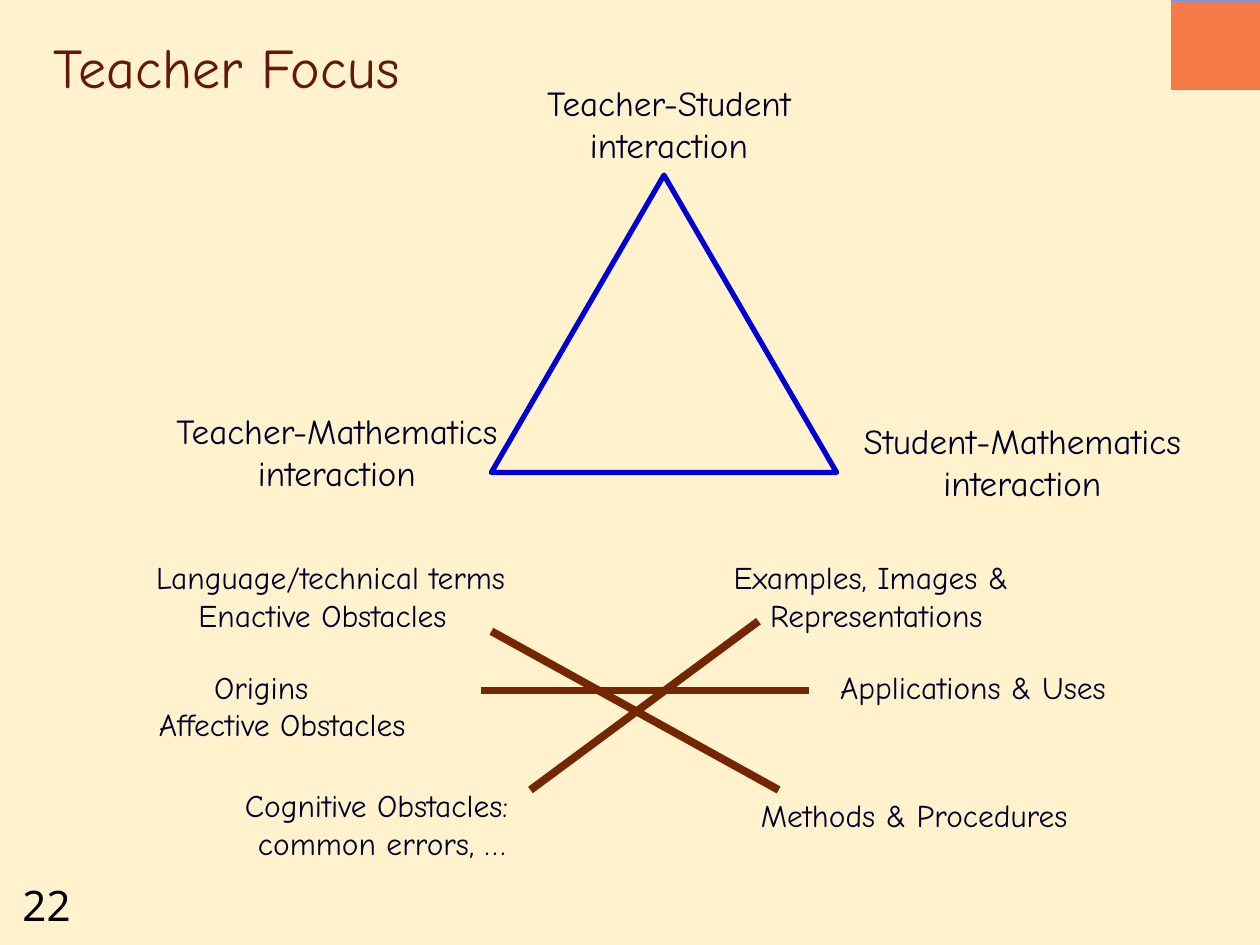
import pptx
import pptx.util
import pptx.dml.color
import pptx.enum.shapes
import pptx.enum.text
import pptx.oxml.ns
import lxml.etree

Inches = pptx.util.Inches
Shapes = pptx.enum.shapes.MSO_SHAPE
Align = pptx.enum.text.PP_ALIGN
Anchor = pptx.enum.text.MSO_ANCHOR

HAND = "Comic Neue"
INK = "00002A"
BROWN = "732600"


def color(value):
    return pptx.dml.color.RGBColor.from_string(value)


def add_text(page, box, lines, size, centred=True, wrap=True,
             font=HAND, ink=INK, anchor=Anchor.TOP):
    label = page.shapes.add_textbox(*map(Inches, box))
    frame = label.text_frame
    frame.word_wrap = wrap
    frame.vertical_anchor = anchor
    for index, line in enumerate(lines):
        para = frame.paragraphs[0] if index == 0 else frame.add_paragraph()
        para.alignment = Align.CENTER if centred else Align.LEFT
        span = para.add_run()
        span.text = line
        span.font.name = font
        span.font.size = pptx.util.Pt(size)
        span.font.color.rgb = color(ink)


def add_outlined(page, kind, box, line, width, fill=None):
    shape = page.shapes.add_shape(kind, *map(Inches, box))
    shape.shadow.inherit = False
    if fill:
        shape.fill.solid()
        shape.fill.fore_color.rgb = color(fill)
    else:
        shape.fill.background()
    shape.line.color.rgb = color(line)
    shape.line.width = pptx.util.Pt(width)


def add_line(page, start, end):
    line = page.shapes.add_connector(
        pptx.enum.shapes.MSO_CONNECTOR.STRAIGHT, *map(Inches, start + end))
    line.line.color.rgb = color(BROWN)
    line.line.width = pptx.util.Pt(4.5)
    properties = line._element.spPr
    lxml.etree.SubElement(properties, pptx.oxml.ns.qn("a:effectLst"))


def add_frame(page, box):
    left, top, width, height = box
    add_text(page, (left + 0.08, top + height - 0.57, 0.75, 0.5), ["22"], 24,
             centred=False, font="Noto Sans", ink="000000")
    add_text(page, (left + 0.33, top + 0.17, 8.5, 0.67), ["Teacher Focus"], 32,
             centred=False, ink="631908", anchor=Anchor.BOTTOM)
    add_outlined(page, Shapes.ACTION_BUTTON_CUSTOM,
                 (left + width - 0.7, top, 0.71, 0.71), "6699FF", 0.75, "F57B49")


def add_interactions(page, box):
    left, top, width, height = box
    add_outlined(page, Shapes.ISOSCELES_TRIANGLE, box, "0000D5", 3)
    corners = [
        ("Teacher-Student", 0.23, -0.79, 2.36),
        ("Student-Mathematics", width - 0.14, height - 0.47, 3.23),
        ("Teacher-Mathematics", -2.84, height - 0.55, 3.23),
    ]
    for pair, across, down, wide in corners:
        add_text(page, (left + across, top + down, wide, 0.77),
                 [f"{pair} interaction"], 20)


def add_awareness(page, box):
    left, top, width, height = box
    centred = [
        (0.79, 1.81, 2.52, 0.71, ["Cognitive Obstacles: ", "common errors, …"]),
        (0.32, 0.3, 2.52, 0.4, ["Enactive Obstacles"]),
        (0, 1.17, 2.52, 0.4, ["Affective Obstacles"]),
        (4.73, 0, 2.49, 0.71, ["Examples, Images & ", "Representations"]),
    ]
    for across, down, wide, tall, lines in centred:
        add_text(page, (left + across, top + down, wide, tall), lines, 18)
    single = [
        (0.16, 0, 3.15, "Language/technical terms"),
        (0.62, 0.87, 1.02, "Origins"),
        (5.59, 0.87, 2.43, "Applications & Uses"),
        (4.96, 1.89, 2.8, "Methods & Procedures"),
    ]
    for across, down, wide, line in single:
        add_text(page, (left + across, top + down, wide, 0.4), [line], 18,
                 centred=False, wrap=False)
    strokes = [
        (2.92, 0.63, 5.2, 1.89),
        (3.23, 1.89, 5.04, 0.55),
        (2.84, 1.1, 5.44, 1.1),
    ]
    for x1, y1, x2, y2 in strokes:
        add_line(page, (left + x1, top + y1), (left + x2, top + y2))


def main():
    deck = pptx.Presentation()
    deck.slide_width = Inches(10)
    deck.slide_height = Inches(7.5)
    page = deck.slides.add_slide(deck.slide_layouts[6])
    page.background.fill.solid()
    page.background.fill.fore_color.rgb = color("FFF2CC")
    add_frame(page, (0, 0, 10, 7.5))
    add_interactions(page, (3.9, 1.39, 2.74, 2.36))
    add_awareness(page, (0.98, 4.38, 8.02, 2.52))
    deck.save("out.pptx")


if __name__ == "__main__":
    main()
